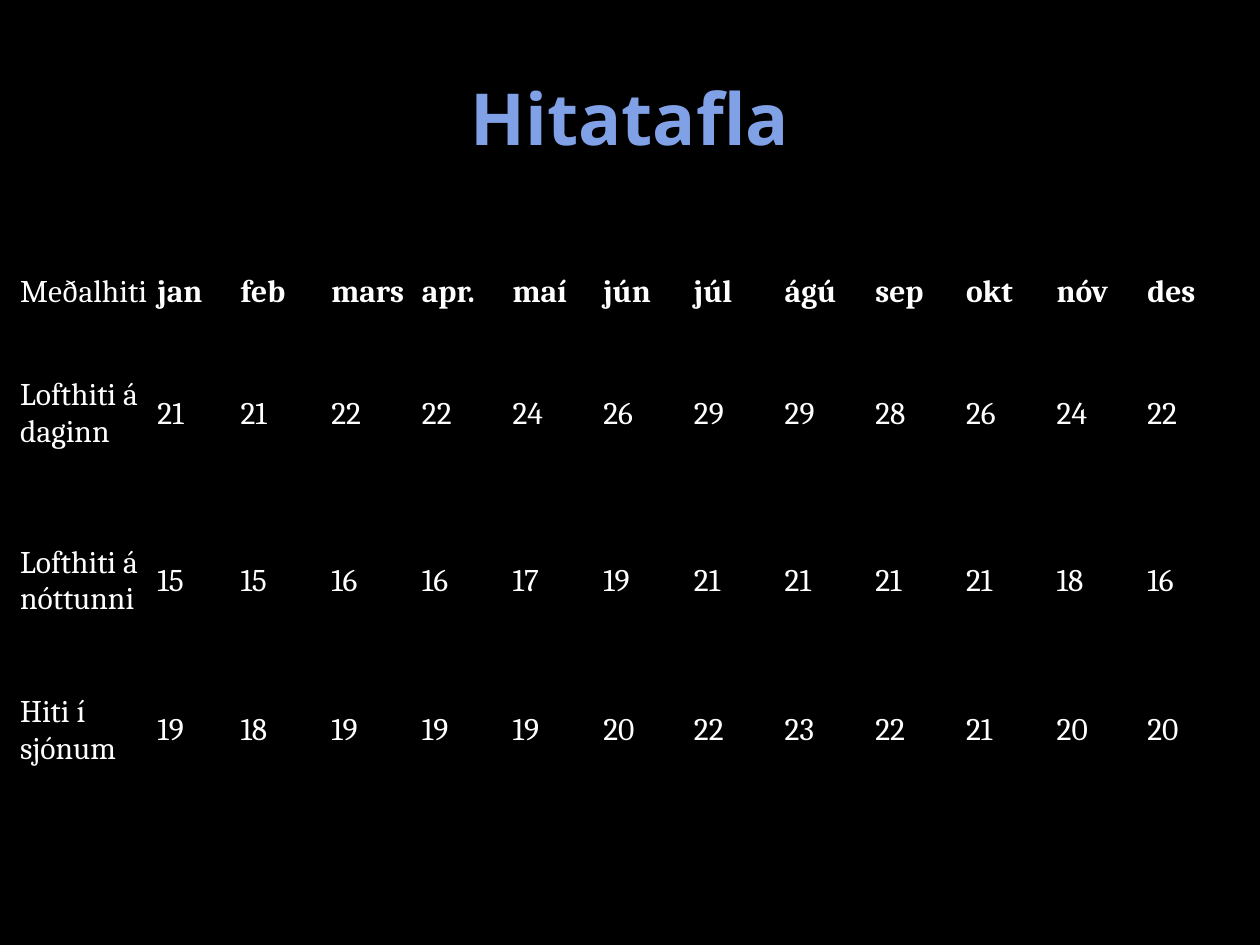
from dataclasses import dataclass

from pptx import Presentation
from pptx.dml.color import RGBColor
from pptx.enum.text import MSO_ANCHOR, PP_ALIGN
from pptx.util import Inches, Pt

BACKGROUND, TITLE_COLOR, TEXT_COLOR = "000000", "81A1E7", "FFFFFF"
NO_STYLE_NO_GRID = "{2D5ABB26-0587-4C30-8999-92F81FD0307C}"
MONTHS = "jan feb mars apr. maí jún júl ágú sep okt nóv des".split()
COLUMN_WIDTHS = [1.09, 0.66] + [0.72] * (len(MONTHS) - 1)


@dataclass
class TableRow:
    label: str
    values: list
    height: float
    bold: bool = False


ROWS = [
    TableRow("Meðalhiti", MONTHS, 0.74, bold=True),
    TableRow("Lofthiti á daginn",
             [21, 21, 22, 22, 24, 26, 29, 29, 28, 26, 24, 22], 1.19),
    TableRow("Lofthiti á nóttunni",
             [15, 15, 16, 16, 17, 19, 21, 21, 21, 21, 18, 16], 1.47),
    TableRow("Hiti í sjónum",
             [19, 18, 19, 19, 19, 20, 22, 23, 22, 21, 20, 20], 0.9),
]


def color(value: str) -> RGBColor:
    return RGBColor.from_string(value)


def style_font(font, name: str, size: float, hex_color: str, bold: bool) -> None:
    font.name, font.size, font.bold = name, Pt(size), bold
    font.color.rgb = color(hex_color)


def fill_cell(cell, text: str, bold: bool) -> None:
    cell.fill.background()
    cell.vertical_anchor = MSO_ANCHOR.MIDDLE
    cell.margin_left = cell.margin_right = cell.margin_top = cell.margin_bottom = 0
    cell.text = text
    style_font(cell.text_frame.paragraphs[0].font, "Cambria", 18, TEXT_COLOR, bold)


def add_title(slide, text: str) -> None:
    title = slide.shapes.title
    title.left, title.top = Inches(0.5), Inches(0.3)
    title.width, title.height = Inches(9), Inches(1.25)
    title.text_frame.text = text
    title.text_frame.vertical_anchor = MSO_ANCHOR.MIDDLE
    paragraph = title.text_frame.paragraphs[0]
    paragraph.alignment = PP_ALIGN.CENTER
    style_font(paragraph.font, "Open Sans", 41, TITLE_COLOR, True)


def add_temperature_table(slide, rows: list[TableRow]) -> None:
    frame = slide.shapes.add_table(
        len(rows), len(COLUMN_WIDTHS), Inches(0.16), Inches(1.95),
        Inches(sum(COLUMN_WIDTHS)), Inches(sum(row.height for row in rows)))
    table = frame.table
    table.first_row = table.horz_banding = False
    table._tbl.tblPr.find("{*}tableStyleId").text = NO_STYLE_NO_GRID
    for column, width in zip(table.columns, COLUMN_WIDTHS):
        column.width = Inches(width)
    for index, row in enumerate(rows):
        table.rows[index].height = Inches(row.height)
        fill_cell(table.cell(index, 0), row.label, False)
        for month, value in enumerate(row.values, start=1):
            fill_cell(table.cell(index, month), str(value), row.bold)


def main() -> None:
    presentation = Presentation()
    presentation.slide_width, presentation.slide_height = Inches(10), Inches(7.5)
    # Title Only layout on a black background
    slide = presentation.slides.add_slide(presentation.slide_layouts[5])
    slide.background.fill.solid()
    slide.background.fill.fore_color.rgb = color(BACKGROUND)
    add_title(slide, "Hitatafla")
    add_temperature_table(slide, ROWS)
    presentation.save("out.pptx")


if __name__ == "__main__":
    main()
